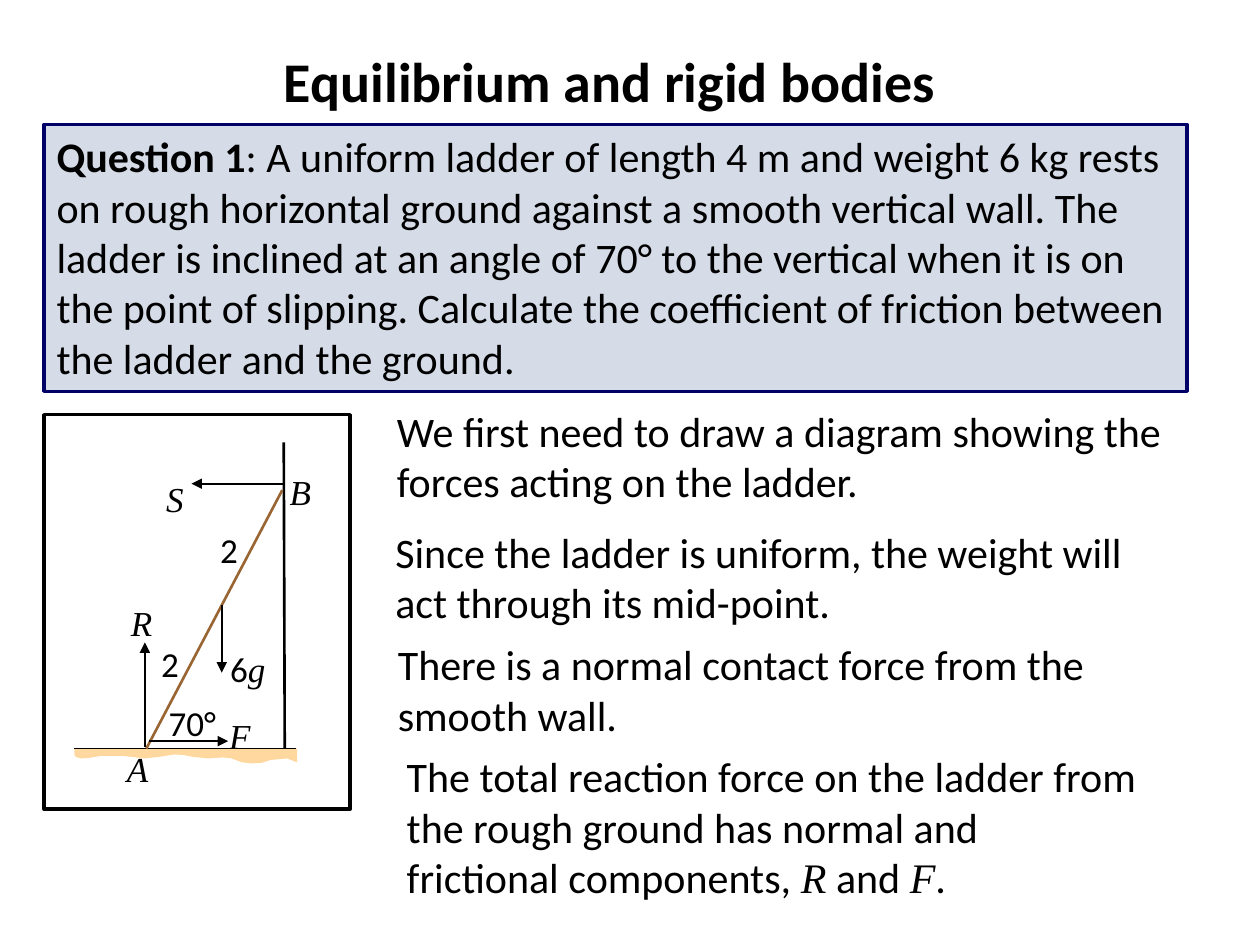
from lxml.etree import SubElement
from pptx import Presentation
from pptx.dml.color import RGBColor
from pptx.enum.shapes import MSO_CONNECTOR, MSO_SHAPE
from pptx.enum.text import MSO_ANCHOR, PP_ALIGN
from pptx.oxml.ns import qn
from pptx.util import Cm, Pt

BLACK = RGBColor(0x00, 0x00, 0x00)
NAVY = RGBColor(0x00, 0x00, 0x66)
PALE_BLUE = RGBColor(0xD5, 0xDC, 0xE7)
SAND = RGBColor(0xFF, 0xD8, 0x9F)
BROWN = RGBColor(0x99, 0x66, 0x33)

TITLE_SIZE, BODY_SIZE, LABEL_SIZE = 32, 24, 20
GROUND = 15.09
WALL = 5.72

# Text is given as (words, style) pairs
PLAIN, BOLD, SYMBOL = "plain", "bold", "symbol"

QUESTION = [
    ("Question 1", BOLD),
    (": A uniform ladder of length 4 m and weight 6 kg rests on rough horizontal "
     "ground against a smooth vertical wall. The ladder is inclined at an angle of "
     "70° to the vertical when it is on the point of slipping. Calculate the "
     "coefficient of friction between the ladder and the ground.", PLAIN),
]

EXPLANATIONS = [
    ((7.75, 8.05, 16.08, 2.31),
     [("We first need to draw a diagram showing the forces acting on the ladder.", PLAIN)]),
    ((7.72, 10.49, 16.36, 2.31),
     [("Since the ladder is uniform, the weight will act through its mid-point.", PLAIN)]),
    ((7.77, 12.75, 16.05, 2.31),
     [("There is a normal contact force from the smooth wall.", PLAIN)]),
    ((7.95, 15.01, 15.21, 3.33),
     [("The total reaction force on the ladder from the rough ground has normal "
       "and frictional components, ", PLAIN),
      ("R", SYMBOL), (" and ", PLAIN), ("F", SYMBOL), (".", PLAIN)]),
]

LABELS = [
    ((5.59, 9.37, 1.17, 0.94), [("B", SYMBOL)]),
    ((3.15, 14.02, 1.85, 0.91), [("70°", PLAIN)]),
    ((2.31, 14.94, 1.02, 0.81), [("A", SYMBOL)]),
    ((3.1, 9.5, 1.02, 0.89), [("S", SYMBOL)]),
    ((4.39, 12.93, 1.35, 0.97), [("6", PLAIN), ("g", SYMBOL)]),
    ((3.0, 12.83, 0.94, 0.94), [("2", PLAIN)]),
    ((4.19, 10.52, 0.99, 1.04), [("2", PLAIN)]),
    ((2.39, 12.01, 1.12, 1.04), [("R", SYMBOL)]),
    ((4.37, 14.27, 0.86, 0.79), [("F", SYMBOL)]),
]

SOIL = [
    (1.5, GROUND), (5.99, GROUND), (5.99, 15.37), (5.79, 15.29), (5.46, 15.32),
    (5.27, 15.38), (5.08, 15.39), (4.88, 15.37), (4.67, 15.29), (4.5, 15.27),
    (4.19, 15.29), (3.9, 15.26), (3.7, 15.22), (3.51, 15.21), (3.2, 15.26),
    (2.92, 15.29), (2.49, 15.24), (2.03, 15.24), (1.8, 15.28), (1.63, 15.29),
    (1.53, 15.26), (1.5, 15.21),
]

FORCES = [
    ((WALL, 9.75), (3.86, 9.75)),
    ((4.47, 12.19), (4.47, 13.56)),
    ((2.92, 15.06), (2.92, 12.95)),
    ((3.0, 14.94), (4.6, 14.94)),
]


class SlideBuilder:
    def __init__(self, slide):
        self.shapes = slide.shapes

    def fill_text(self, box, spans, size, align=PP_ALIGN.LEFT, anchor=MSO_ANCHOR.TOP):
        frame = box.text_frame
        frame.word_wrap = True
        frame.vertical_anchor = anchor
        para = frame.paragraphs[0]
        para.alignment = align
        for words, style in spans:
            span = para.add_run()
            span.text = words
            span.font.name = "Times New Roman" if style == SYMBOL else "Calibri"
            span.font.size = Pt(size)
            span.font.bold = style == BOLD
            span.font.italic = style == SYMBOL
            span.font.color.rgb = BLACK

    def text(self, place, spans, size, **layout):
        box = self.shapes.add_textbox(*map(Cm, place))
        self.fill_text(box, spans, size, **layout)

    def panel(self, place, line_colour, fill=None):
        box = self.shapes.add_shape(MSO_SHAPE.RECTANGLE, *map(Cm, place))
        box.shadow.inherit = False
        if fill is None:
            box.fill.background()
        else:
            box.fill.solid()
            box.fill.fore_color.rgb = fill
        box.line.color.rgb = line_colour
        box.line.width = Pt(2)
        return box

    def area(self, points, fill):
        start, *others = [(Cm(x), Cm(y)) for x, y in points]
        builder = self.shapes.build_freeform(*start)
        builder.add_line_segments(others)
        shape = builder.convert_to_shape()
        shape.shadow.inherit = False
        shape.fill.solid()
        shape.fill.fore_color.rgb = fill
        shape.line.fill.background()

    def line(self, start, end, colour=BLACK, width=1, arrow=False):
        connector = self.shapes.add_connector(
            MSO_CONNECTOR.STRAIGHT, *map(Cm, start), *map(Cm, end))
        connector.line.color.rgb = colour
        connector.line.width = Pt(width)
        properties = connector._element.spPr
        if arrow:
            SubElement(properties.find(qn("a:ln")), qn("a:tailEnd"), type="triangle")
        SubElement(properties, qn("a:effectLst"))


def main():
    deck = Presentation()
    deck.slide_width, deck.slide_height = Cm(25.4), Cm(19.05)
    page = SlideBuilder(deck.slides.add_slide(deck.slide_layouts[6]))

    page.text((2.9, 0.74, 18.8, 1.75), [("Equilibrium and rigid bodies", BOLD)],
              TITLE_SIZE, align=PP_ALIGN.CENTER, anchor=MSO_ANCHOR.MIDDLE)
    question = page.panel((0.89, 2.51, 23.04, 5.38), NAVY, PALE_BLUE)
    page.fill_text(question, QUESTION, BODY_SIZE)
    for place, spans in EXPLANATIONS:
        page.text(place, spans, BODY_SIZE)

    page.panel((0.89, 8.36, 6.17, 7.95), BLACK)
    page.area(SOIL, SAND)
    page.line((1.5, GROUND), (5.97, GROUND))
    page.line((5.74, GROUND), (WALL, 8.92), width=1.5)
    page.line((2.95, GROUND), (5.69, 9.88), BROWN, 1.5)
    for start, end in FORCES:
        page.line(start, end, arrow=True)
    for place, spans in LABELS:
        page.text(place, spans, LABEL_SIZE)

    deck.save("out.pptx")


if __name__ == "__main__":
    main()
